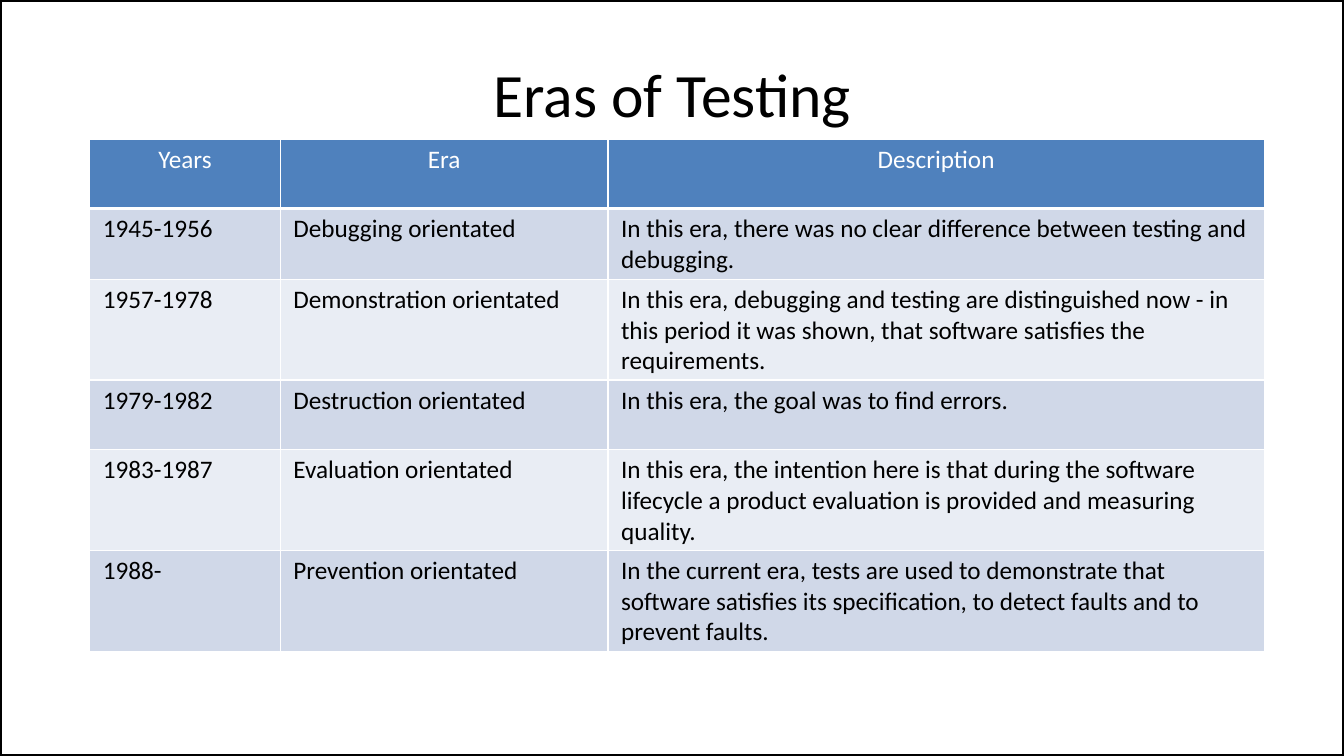
import lxml.etree
import pptx
import pptx.dml.color
import pptx.enum.shapes
import pptx.enum.text
import pptx.oxml.ns
import pptx.util

Inches = pptx.util.Inches
Pt = pptx.util.Pt
CENTER = pptx.enum.text.PP_ALIGN.CENTER
LEFT = pptx.enum.text.PP_ALIGN.LEFT

COLUMN_WIDTHS = [1.89, 3.25, 6.51]
ROW_HEIGHT = 0.69
ERAS = [
    ("Years", "Era", "Description"),
    ("1945-1956", "Debugging orientated",
     "In this era, there was no clear difference between testing and debugging."),
    ("1957-1978", "Demonstration orientated",
     "In this era, debugging and testing are distinguished now - in this period "
     "it was shown, that software satisfies the requirements."),
    ("1979-1982", "Destruction orientated",
     "In this era, the goal was to find errors."),
    ("1983-1987", "Evaluation orientated",
     "In this era, the intention here is that during the software lifecycle "
     "a product evaluation is provided and measuring quality."),
    ("1988-", "Prevention orientated",
     "In the current era, tests are used to demonstrate that software satisfies "
     "its specification, to detect faults and to prevent faults."),
]


def rgb(color):
    """Turn a hex string into a colour."""
    return pptx.dml.color.RGBColor.from_string(color)


def write(frame, text, size, color, align):
    """Put one styled paragraph into a text frame."""
    paragraph = frame.paragraphs[0]
    paragraph.text = text
    paragraph.alignment = align
    paragraph.font.name = "Calibri"
    paragraph.font.size = Pt(size)
    paragraph.font.bold = False
    paragraph.font.color.rgb = rgb(color)


def add_frame(slide, width, height):
    """Draw the black outline around the slide."""
    frame = slide.shapes.add_shape(
        pptx.enum.shapes.MSO_SHAPE.RECTANGLE, 0, 0, width, height)
    frame.shadow.inherit = False
    frame.fill.background()
    frame.line.color.rgb = rgb("000000")
    frame.line.width = Pt(3)


def add_title(slide, text):
    """Add the centred slide title."""
    title = slide.shapes.add_textbox(
        Inches(0.67), Inches(0.3), Inches(12), Inches(1.25)).text_frame
    title.word_wrap = True
    title.vertical_anchor = pptx.enum.text.MSO_ANCHOR.MIDDLE
    write(title, text, 44, "000000", CENTER)


def add_border(cell, side, width):
    """Draw a white line on one side of a cell."""
    qn = pptx.oxml.ns.qn
    properties = cell._tc.get_or_add_tcPr()
    border = lxml.etree.SubElement(properties, qn(f"a:ln{side}"), w=str(Pt(width)))
    fill = lxml.etree.SubElement(border, qn("a:solidFill"))
    lxml.etree.SubElement(fill, qn("a:srgbClr"), val="FFFFFF")


def style_cell(cell, text, row):
    """Fill a cell according to its row and write its text."""
    header = row == 0
    for side in "LRTB":
        add_border(cell, side, 3 if header and side == "B" else 1)
    band = "D0D8E8" if row % 2 else "E9EDF4"
    cell.fill.solid()
    cell.fill.fore_color.rgb = rgb("4F81BD" if header else band)
    cell.margin_left = cell.margin_right = Inches(0.13)
    cell.margin_top = cell.margin_bottom = Inches(0.05)
    write(cell.text_frame, text, 18,
          "FFFFFF" if header else "000000", CENTER if header else LEFT)


def add_era_table(slide):
    """Add the table of testing eras."""
    table = slide.shapes.add_table(
        len(ERAS), len(COLUMN_WIDTHS), Inches(0.89), Inches(1.38),
        Inches(sum(COLUMN_WIDTHS)), Inches(ROW_HEIGHT * len(ERAS))).table
    for column, width in zip(table.columns, COLUMN_WIDTHS):
        column.width = Inches(width)
    for row, era in enumerate(ERAS):
        table.rows[row].height = Inches(ROW_HEIGHT)
        for column, text in enumerate(era):
            style_cell(table.cell(row, column), text, row)


def main():
    """Build the slide and save it."""
    deck = pptx.Presentation()
    deck.slide_width = Inches(13.33)
    deck.slide_height = Inches(7.5)
    slide = deck.slides.add_slide(deck.slide_layouts[6])
    add_frame(slide, deck.slide_width, deck.slide_height)
    add_title(slide, "Eras of Testing")
    add_era_table(slide)
    deck.save("out.pptx")


if __name__ == "__main__":
    main()
